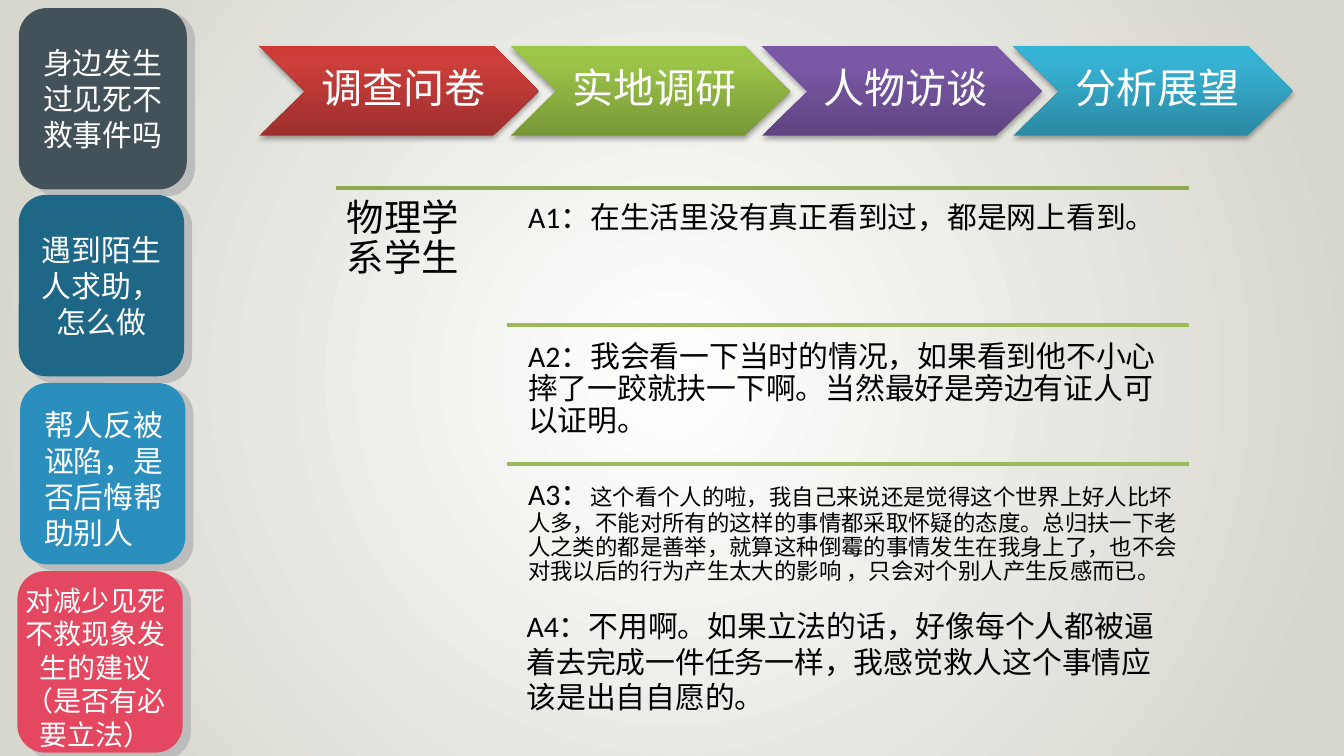
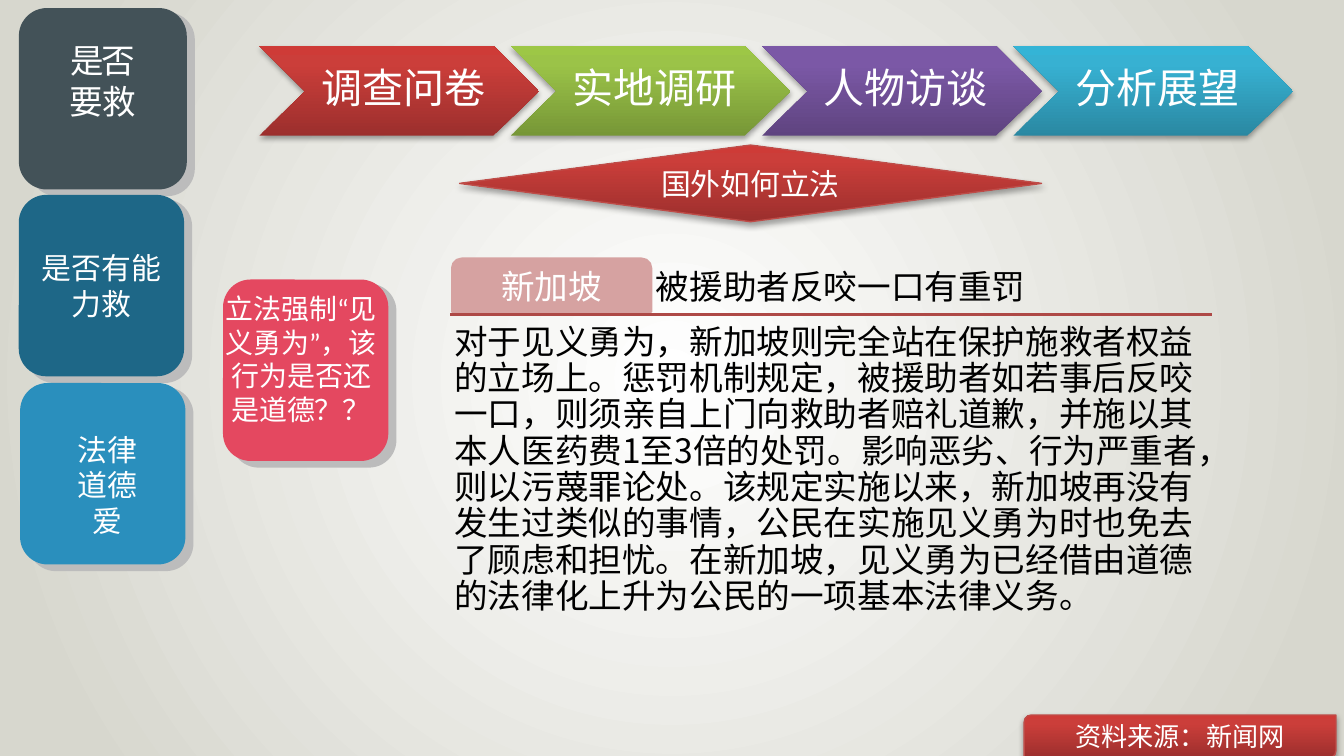
from lxml import etree
from pptx import Presentation
from pptx.dml.color import RGBColor
from pptx.enum.lang import MSO_LANGUAGE_ID
from pptx.enum.shapes import MSO_CONNECTOR, MSO_SHAPE
from pptx.enum.text import MSO_ANCHOR, MSO_AUTO_SIZE, PP_ALIGN
from pptx.oxml.ns import qn
from pptx.util import Pt

SCALE = 9144
ROUNDED = MSO_SHAPE.ROUNDED_RECTANGLE
TAB = MSO_SHAPE.ROUND_2_SAME_RECTANGLE
FOOTER = MSO_SHAPE.ROUND_2_DIAG_RECTANGLE
DIAMOND = MSO_SHAPE.FLOWCHART_DECISION
STRAIGHT = MSO_CONNECTOR.STRAIGHT
CENTER, LEFT = PP_ALIGN.CENTER, PP_ALIGN.LEFT
TOP, MIDDLE, BOTTOM = MSO_ANCHOR.TOP, MSO_ANCHOR.MIDDLE, MSO_ANCHOR.BOTTOM
GROW, FIXED = MSO_AUTO_SIZE.SHAPE_TO_FIT_TEXT, MSO_AUTO_SIZE.NONE
CHINESE = MSO_LANGUAGE_ID.SIMPLIFIED_CHINESE

COLORS = {
    "white": "FFFFFF", "black": "000000", "paper": "D7D7CE", "shade": "BCBCBC",
    "slate": "435258", "teal": "1E6787", "blue": "2A8FBD", "pink": "E44860",
    "rose": "D6A2A1", "brick": "AE4946", "red edge": "BF4C48",
    "olive": "8DAA51", "green": "9BBB59",
}
GRADIENTS = {
    "red": ("9C2F2D", "CB3E3A", "CE3B37"),
    "lime": ("779737", "9BC348", "9DC746"),
    "purple": ("5F4480", "7B58A6", "7C57A8"),
    "cyan": ("2A88A2", "37B1D2", "34B4D6"),
}
STEPS = [("调查问卷", "red"), ("实地调研", "lime"), ("人物访谈", "purple"), ("分析展望", "cyan")]
CJK = "Noto Sans CJK SC"
PLAIN = (10, 5, 10, 5)


def add_node(parent, tag, **values):
    node = etree.SubElement(parent, qn(tag))
    for name, value in values.items():
        node.set(name, str(value))
    return node


def set_all(target, values):
    for name, value in values.items():
        setattr(target, name, value)


def set_gradient(fill, element, stops, radial=False):
    fill.gradient()
    gradient = next(element.iter(qn("a:gradFill")))
    for child in list(gradient):
        gradient.remove(child)
    stop_list = add_node(gradient, "a:gsLst")
    for position, color in zip((0, 90000 if radial else 80000, 100000), stops):
        add_node(add_node(stop_list, "a:gs", pos=position), "a:srgbClr", val=color)
    if radial:
        circle = add_node(gradient, "a:path", path="circle")
        add_node(circle, "a:fillToRect", l=50000, t=50000, r=50000, b=50000)
    else:
        add_node(gradient, "a:lin", ang=16200000, scaled=0)


class SlideBuilder:
    def __init__(self):
        self.deck = Presentation()
        self.deck.slide_width = 1000 * SCALE
        self.deck.slide_height = self.deck.slide_width * 9 // 16
        master = self.deck.slide_master
        stops = [COLORS[name] for name in ("white", "paper", "paper")]
        set_gradient(master.background.fill, master.element, stops, radial=True)
        self.page = None

    def new_page(self):
        self.page = self.deck.slides.add_slide(self.deck.slide_layouts[6])
        for index, (label, color) in enumerate(STEPS):
            self.chevron(193 + 187 * index, 34, label, color)

    def label(self, shape, paragraphs, size, color="white", font="Calibri", align=CENTER,
              anchor=MIDDLE, insets=PLAIN, tight=False, grow=False):
        frame = shape.text_frame
        sides = ("margin_left", "margin_top", "margin_right", "margin_bottom")
        set_all(frame, {side: inset * SCALE for side, inset in zip(sides, insets)})
        set_all(frame, {"word_wrap": True, "vertical_anchor": anchor,
                        "auto_size": GROW if grow else FIXED})
        for index, spans in enumerate(paragraphs):
            para = frame.add_paragraph() if index else frame.paragraphs[0]
            para.alignment = align
            if tight:
                set_all(para, {"line_spacing": 0.9, "space_after": Pt(round(size * 0.35))})
            for text, changes in [(spans, {})] if isinstance(spans, str) else spans:
                span = para.add_run()
                span.text = text
                span.font.color.rgb = RGBColor.from_string(COLORS[color])
                set_all(span.font, {"size": Pt(changes.get("size", size)), "name": font,
                                    "language_id": CHINESE})
                properties = span.font._element
                add_node(properties, "a:ea", typeface="Calibri")
                if "spacing" in changes:
                    properties.set("spc", str(changes["spacing"]))

    def paint(self, shape, color, edge=None, width=0.75):
        if color in GRADIENTS:
            set_gradient(shape.fill, shape._element, GRADIENTS[color])
        else:
            shape.fill.solid()
            shape.fill.fore_color.rgb = RGBColor.from_string(COLORS[color])
        if edge:
            shape.line.color.rgb = RGBColor.from_string(COLORS[edge])
            shape.line.width = Pt(width)
        else:
            shape.line.fill.background()
        shape.shadow.inherit = False
        if color in GRADIENTS:
            effects = next(shape._element.iter(qn("a:effectLst")))
            shadow = add_node(effects, "a:outerShdw", blurRad=Pt(3.1), dist=Pt(1.8),
                              dir=5400000, rotWithShape=0)
            add_node(add_node(shadow, "a:srgbClr", val=COLORS["black"]), "a:alpha", val=35000)

    def shape(self, kind, place, color, edge=None, width=0.75):
        shape = self.page.shapes.add_shape(kind, *(length * SCALE for length in place))
        self.paint(shape, color, edge, width)
        return shape

    def chevron(self, left, top, label, color):
        outline = [(174, 0), (208, 34), (174, 67), (0, 67), (34, 34)]
        builder = self.page.shapes.build_freeform(left, top, scale=SCALE)
        builder.add_line_segments([(left + x, top + y) for x, y in outline], close=True)
        arrow = builder.convert_to_shape()
        self.paint(arrow, color)
        self.label(arrow, [label], 22, font=CJK, insets=(43, 3, 37, 3), tight=True)

    def tile(self, left, top, color, width=123):
        self.shape(ROUNDED, (left + width - 117, top + 3, 123, 137), "shade")
        return self.shape(ROUNDED, (left, top, width, 135), color)

    def text(self, place, paragraphs, size, **style):
        box = self.page.shapes.add_textbox(*(length * SCALE for length in place))
        self.label(box, paragraphs, size, **{"align": LEFT, "anchor": TOP, **style})

    def rule(self, left, right, top, color):
        line = self.page.shapes.add_connector(
            STRAIGHT, left * SCALE, top * SCALE, right * SCALE, top * SCALE)
        line.line.color.rgb = RGBColor.from_string(COLORS[color])
        line.line.width = Pt(2)
        add_node(line._element.spPr, "a:effectLst")

    def sidebar(self, first, first_insets, second, third, third_top, third_align, note, note_place):
        self.label(self.tile(14, 6, "slate", 125), first, 16, insets=first_insets)
        self.label(self.tile(14, 145, "teal"), [second], 16)
        self.tile(15, 285, "blue")
        self.text((23, third_top, 114, 118), third, 16, font="Times New Roman",
                  align=third_align, grow=True)
        left, top = note_place
        self.tile(left, top, "pink")
        self.text((left - 9, top + 4, 134, 136), [note], 15, font="Arial", align=CENTER, grow=True)


def interview_page(builder):
    builder.new_page()
    builder.sidebar(["身边发生过见死不救事件吗"], PLAIN, "遇到陌生人求助，怎么做",
                    ["帮人反被诬陷，是否后悔帮助别人"], 298, LEFT,
                    "对减少见死不救现象发生的建议（是否有必要立法）", (13, 425))
    builder.rule(250, 885, 140, "olive")
    builder.text((250, 140, 127, 313), ["物理学系学生"], 20, color="black",
                 insets=(8, 8, 8, 8), tight=True)
    answers = [
        "A1：在生活里没有真正看到过，都是网上看到。",
        "A2：我会看一下当时的情况，如果看到他不小心摔了一跤就扶一下啊。当然最好是旁边有证人可以证明。",
        [("A3：", {}),
         ("这个看个人的啦，我自己来说还是觉得这个世界上好人比坏人多，不能对所有的这样的事情都采取怀疑的态度。"
          "总归扶一下老人之类的都是善举，就算这种倒霉的事情发生在我身上了，也不会对我以后的行为产生太大的影响 ，"
          "只会对个别人产生反感而已。", {"size": 12})],
    ]
    for index, answer in enumerate(answers):
        top = 144 + 103 * index
        if index:
            builder.rule(377, 885, top - 5, "green")
        builder.text((386, top, 499, 98), [answer], 16, color="black",
                     insets=(7, 7, 7, 7), tight=True)
    builder.text((382, 447, 494, 91),
                 ["A4：不用啊。如果立法的话，好像每个人都被逼着去完成一件任务一样，"
                  "我感觉救人这个事情应该是出自自愿的。"], 16, color="black", grow=True)


def law_page(builder):
    builder.new_page()
    builder.sidebar([[("是否", {"size": 18, "spacing": -150})], [("要救", {"size": 18})]],
                    (10, 5, 10, 32), "是否有能力救", ["法律", "道德", "爱"], 316, CENTER,
                    "立法强制“见义勇为”，该行为是否还是道德？？", (166, 208))
    footer = builder.shape(FOOTER, (762, 532, 232, 32), "red", "red edge")
    builder.label(footer, ["资料来源：新闻网"], 14)
    topic = builder.shape(DIAMOND, (342, 108, 433, 57), "red", "red edge")
    builder.label(topic, ["国外如何立法"], 16)
    builder.text((484, 193, 420, 39), ["被援助者反咬一口有重罚"], 18, color="black", font=CJK,
                 anchor=BOTTOM, insets=(4, 4, 4, 4), tight=True)
    country = builder.shape(TAB, (337, 193, 147, 39), "rose", "rose", 2)
    builder.label(country, ["新加坡"], 18, font=CJK, insets=(6, 6, 6, 4), tight=True)
    builder.text((335, 239, 567, 78),
                 ["对于见义勇为，新加坡则完全站在保护施救者权益的立场上。惩罚机制规定，被援助者如若事后反咬一口，"
                  "则须亲自上门向救助者赔礼道歉，并施以其本人医药费1至3倍的处罚。影响恶劣、行为严重者，则以污蔑罪论处。"
                  "该规定实施以来，新加坡再没有发生过类似的事情，公民在实施见义勇为时也免去了顾虑和担忧。"
                  "在新加坡，见义勇为已经借由道德的法律化上升为公民的一项基本法律义务。"],
                 18, color="black", font=CJK, insets=(3, 3, 3, 3), tight=True)
    builder.rule(335, 902, 234, "brick")


def main():
    builder = SlideBuilder()
    interview_page(builder)
    law_page(builder)
    builder.deck.save("out.pptx")


if __name__ == "__main__":
    main()
